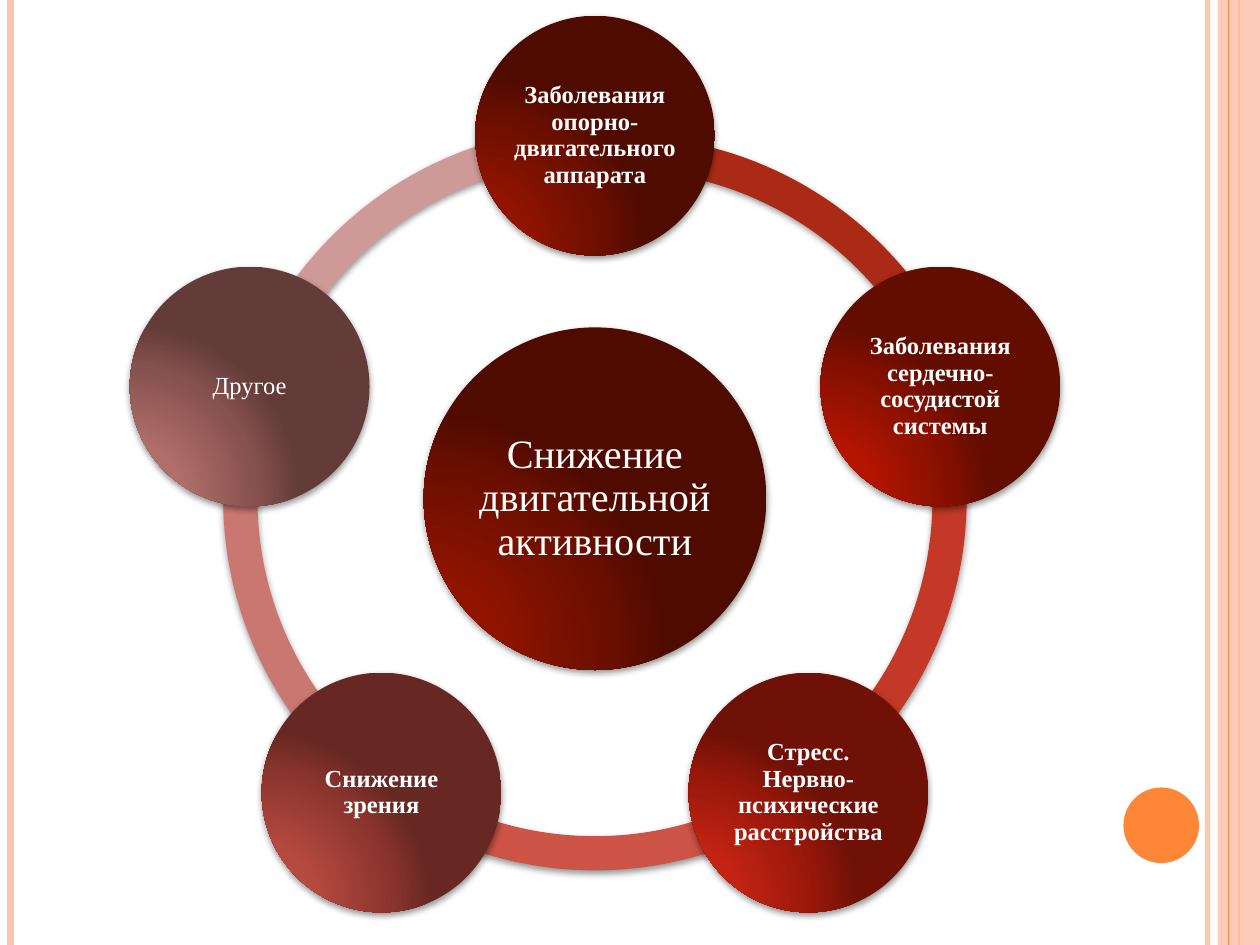
import math

from lxml import etree
from pptx import Presentation
from pptx.dml.color import RGBColor
from pptx.enum import shapes, text
from pptx.oxml import ns
from pptx.util import Pt

COLORS = {
    "background": "FFFFFF",
    "text": "FFFFFF",
    "peach": "FEC3AE",
    "orange": "FE8637",
    "shadow": "000000",
}
FONT = "Times New Roman"
SLIDE_WIDTH, SLIDE_HEIGHT = 720, 540
CENTER_X, CENTER_Y = 340, 285
ORBIT_RADIUS = 207.5
RING_SIZE = 424.8
HUB_DIAMETER, CAUSE_DIAMETER = 195.8, 137
STOP_POSITIONS = (0, 30, 75, 100)

HUB_SHADES = ("951500", "901400", "6C0F00", "500B00")
# Clockwise from the top: wording, bold, gradient shades
CAUSES = [
    ("Заболевания опорно-двигательного аппарата", True, HUB_SHADES),
    ("Заболевания сердечно-сосудистой системы", True,
     ("B91600", "B31500", "861000", "630C00")),
    ("Стресс. Нервно-психические расстройства", True,
     ("CA2413", "C32312", "96170A", "6F1107")),
    ("Снижение зрения", True, ("BD4C44", "B64A41", "8C352E", "672722")),
    ("Другое", False, ("B6726E", "B06E6A", "86514E", "633C3A")),
]
# Clockwise from the top: colour, shift of the arc from the centre
ARCS = [
    ("AB2A15", (13.7, 5)),
    ("C33826", (0, 0)),
    ("CC5346", (0, 0)),
    ("CB7771", (0, 0)),
    ("CE9A97", (0, 0)),
]


def add_node(parent, tag, **attributes):
    values = {name: str(value) for name, value in attributes.items()}
    return etree.SubElement(parent, ns.qn(tag), values)


def set_alpha(element, percent):
    color = next(element.iter(ns.qn("a:srgbClr")))
    add_node(color, "a:alpha", val=percent * 1000)


def add_plain(slide, kind, left, top, width, height, color=None):
    """Add a preset shape without outline or shadow."""
    shape = slide.shapes.add_shape(kind, Pt(left), Pt(top), Pt(width), Pt(height))
    shape.shadow.inherit = False
    shape.line.fill.background()
    if color:
        shape.fill.solid()
        shape.fill.fore_color.rgb = RGBColor.from_string(color)
    return shape


def add_rule(slide, x, width, color, alpha=None):
    """Add a vertical line over the full slide height."""
    rule = slide.shapes.add_connector(
        shapes.MSO_CONNECTOR.STRAIGHT, Pt(x), Pt(0), Pt(x), Pt(SLIDE_HEIGHT))
    rule.line.color.rgb = RGBColor.from_string(color)
    rule.line.width = Pt(width)
    if alpha:
        set_alpha(rule.element.spPr, alpha)
    add_node(rule.element.spPr, "a:effectLst")


def add_shadow(shape):
    effects = shape.element.spPr.find(ns.qn("a:effectLst"))
    shadow = add_node(effects, "a:outerShdw", blurRad=Pt(4), dist=Pt(1.6),
                      dir=90 * 60000, rotWithShape=0)
    add_node(shadow, "a:srgbClr", val=COLORS["shadow"])
    set_alpha(shadow, 42)


def fill_radial(shape, shades):
    """Fill with a circular gradient that starts at the lower left."""
    shape.fill.background()
    gradient = etree.Element(ns.qn("a:gradFill"), rotWithShape="1")
    stops = add_node(gradient, "a:gsLst")
    for position, shade in zip(STOP_POSITIONS, shades):
        stop = add_node(stops, "a:gs", pos=position * 1000)
        add_node(stop, "a:srgbClr", val=shade)
    circle = add_node(gradient, "a:path", path="circle")
    add_node(circle, "a:fillToRect", l=5000, t=100000, r=120000, b=10000)
    properties = shape.element.spPr
    properties.replace(properties.find(ns.qn("a:noFill")), gradient)


def write_text(shape, wording, size, bold=False, inset=1.4):
    frame = shape.text_frame
    frame.word_wrap = True
    frame.vertical_anchor = text.MSO_ANCHOR.MIDDLE
    frame.margin_left = frame.margin_right = Pt(inset)
    frame.margin_top = frame.margin_bottom = Pt(inset)
    paragraph = frame.paragraphs[0]
    paragraph.alignment = text.PP_ALIGN.CENTER
    paragraph.line_spacing = 0.9
    run = paragraph.add_run()
    run.text = wording
    run.font.name = FONT
    run.font.size = Pt(size)
    run.font.bold = bold
    run.font.color.rgb = RGBColor.from_string(COLORS["text"])


def add_disc(slide, x, y, diameter, shades, wording, **text_format):
    """Add a shaded circle centred on x, y with its wording."""
    disc = add_plain(slide, shapes.MSO_SHAPE.OVAL, x - diameter / 2,
                     y - diameter / 2, diameter, diameter)
    fill_radial(disc, shades)
    add_shadow(disc)
    write_text(disc, wording, **text_format)


def add_arc(slide, start, end, color, shift):
    """Add a ring segment; angles are degrees clockwise from the right."""
    arc = add_plain(slide, shapes.MSO_SHAPE.BLOCK_ARC,
                    CENTER_X - RING_SIZE / 2 + shift[0],
                    CENTER_Y - RING_SIZE / 2 + shift[1],
                    RING_SIZE, RING_SIZE, color)
    # Angles are stored in 60000ths of a degree, adjustments in 100000ths
    arc.adjustments[0] = start * 0.6
    arc.adjustments[1] = end * 0.6
    arc.adjustments[2] = 0.046
    add_shadow(arc)


def add_frame(slide):
    """Add the side stripes and the corner dot."""
    add_rule(slide, 690, 3, COLORS["peach"], alpha=93)
    add_rule(slide, 6, 4.5, COLORS["peach"])
    add_rule(slide, 708, 1.5, COLORS["orange"])
    band = add_plain(slide, shapes.MSO_SHAPE.RECTANGLE,
                     696, 0, 24, SLIDE_HEIGHT, COLORS["peach"])
    set_alpha(band.element.spPr, 87)
    add_rule(slide, 702, 0.75, COLORS["orange"])
    add_plain(slide, shapes.MSO_SHAPE.OVAL, 642, 450, 43.2, 43.2, COLORS["orange"])


def add_cycle(slide):
    step = 360 / len(CAUSES)
    angles = [(270 + step * index) % 360 for index in range(len(CAUSES))]
    for angle, (color, shift) in reversed(list(zip(angles, ARCS))):
        add_arc(slide, angle, (angle + step) % 360, color, shift)
    add_disc(slide, CENTER_X, CENTER_Y, HUB_DIAMETER, HUB_SHADES,
             "Снижение двигательной активности", size=23, inset=2.2)
    for angle, (wording, bold, shades) in zip(angles, CAUSES):
        x = CENTER_X + ORBIT_RADIUS * math.cos(math.radians(angle))
        y = CENTER_Y + ORBIT_RADIUS * math.sin(math.radians(angle))
        add_disc(slide, x, y, CAUSE_DIAMETER, shades, wording, size=14, bold=bold)


def main():
    deck = Presentation()
    deck.slide_width, deck.slide_height = Pt(SLIDE_WIDTH), Pt(SLIDE_HEIGHT)
    slide = deck.slides.add_slide(deck.slide_layouts[6])
    slide.background.fill.solid()
    slide.background.fill.fore_color.rgb = RGBColor.from_string(COLORS["background"])
    add_frame(slide)
    add_cycle(slide)
    deck.save("out.pptx")


if __name__ == "__main__":
    main()
